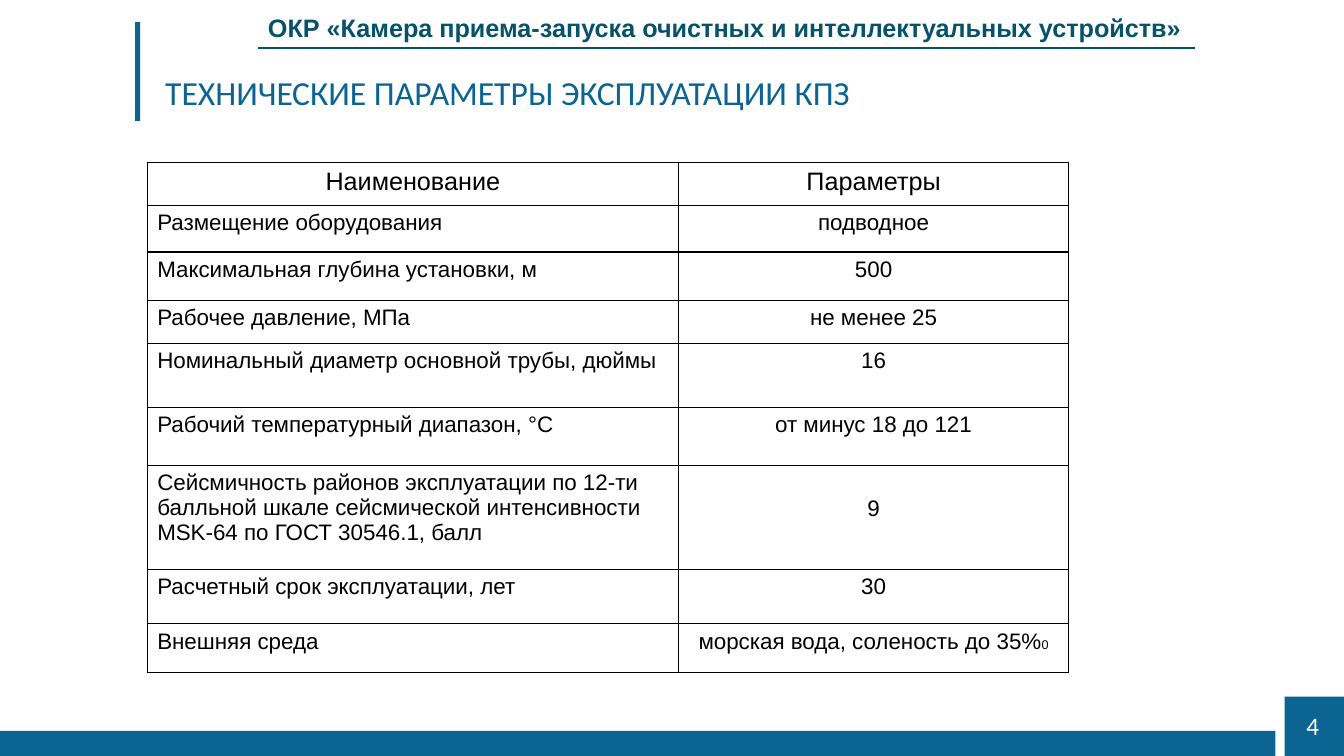
from pptx import Presentation
from pptx.dml.color import RGBColor as RGB
from pptx.enum.shapes import MSO_CONNECTOR as Line, MSO_SHAPE as Shape
from pptx.enum.text import MSO_ANCHOR as Anchor, PP_ALIGN as Align
from pptx.oxml.ns import qn
from pptx.util import Emu, Pt
from lxml.etree import SubElement as Sub

COLORS = {"blue": "0B6491", "teal": "06526A", "ink": "000000", "white": "FFFFFF"}
WIDTHS = [527, 387]
HEIGHTS = [43, 46, 48, 43, 63, 58, 103, 54, 48]
ROWS = [
    ("Наименование", "Параметры"),
    ("Размещение оборудования", "подводное"),
    ("Максимальная глубина установки, м", "500"),
    ("Рабочее давление, МПа", "не менее 25"),
    ("Номинальный диаметр основной трубы, дюймы", "16"),
    ("Рабочий температурный диапазон, °С", "от минус 18 до 121"),
    ("Сейсмичность районов эксплуатации по 12-ти\n"
     "балльной шкале сейсмической интенсивности\n"
     "MSK-64 по ГОСТ 30546.1, балл", "9"),
    ("Расчетный срок эксплуатации, лет", "30"),
    ("Внешняя среда", "морская вода, соленость до 35%"),
]


def px(n):
    return Emu(n * 9144)


class Page:
    def __init__(self, deck):
        self.slide = deck.slides.add_slide(deck.slide_layouts[6])
        self.shapes = self.slide.shapes

    def color(self, name):
        return RGB.from_string(COLORS[name])

    def style(self, run, size, color, face="Arial", bold=False):
        font = run.font
        font.name, font.size, font.bold = face, Pt(size), bold
        font.color.rgb = self.color(color)

    def block(self, *box):
        shape = self.shapes.add_shape(Shape.RECTANGLE, *map(px, box))
        shape.shadow.inherit = False
        shape.fill.solid()
        shape.fill.fore_color.rgb = self.color("blue")
        shape.line.fill.background()

    def rule(self, left, top, right):
        line = self.shapes.add_connector(
            Line.STRAIGHT, px(left), px(top), px(right), px(top))
        line.line.color.rgb = self.color("teal")
        line.line.width = Pt(1.5)
        Sub(line._element.spPr, qn("a:effectLst"))

    def text(self, words, box, size, color, face, bold=False, wrap=True, space=1.0):
        frame = self.shapes.add_textbox(*map(px, box)).text_frame
        frame.word_wrap = wrap
        frame.vertical_anchor = Anchor.MIDDLE
        frame.text = words
        para = frame.paragraphs[0]
        para.line_spacing = space
        self.style(para.runs[0], size, color, face, bold)

    def border(self, cell):
        props = cell._tc.get_or_add_tcPr()
        for side in ("a:lnL", "a:lnR", "a:lnT", "a:lnB"):
            line = Sub(props, qn(side), w=str(Pt(1)))
            fill = Sub(line, qn("a:solidFill"))
            Sub(fill, qn("a:srgbClr"), val=COLORS["ink"])

    def cell(self, cell, words, size, align):
        self.border(cell)
        cell.fill.background()
        cell.text = words
        for para in cell.text_frame.paragraphs:
            para.alignment = align
            self.style(para.runs[0], size, "ink")

    def table(self, left, top):
        box = (left, top, sum(WIDTHS), sum(HEIGHTS))
        grid = self.shapes.add_table(len(ROWS), len(WIDTHS), *map(px, box)).table
        grid.first_row = grid.horz_banding = False
        for col, width in zip(grid.columns, WIDTHS):
            col.width = px(width)
        for i, (row, height) in enumerate(zip(grid.rows, HEIGHTS)):
            row.height = px(height)
            for j, words in enumerate(ROWS[i]):
                head = i == 0
                align = Align.CENTER if head or j else Align.LEFT
                self.cell(grid.cell(i, j), words, 18 if head else 16, align)
        return grid


def main():
    deck = Presentation()
    deck.slide_width, deck.slide_height = px(1333), px(750)
    page = Page(deck)
    page.block(134, 22, 5, 98)
    page.block(1274, 691, 59, 59)
    page.block(0, 725, 1265, 25)
    page.text("ОКР «Камера приема-запуска очистных и интеллектуальных устройств»",
              (256, 7, 946, 40), 18, "teal", "Arial", bold=True)
    page.rule(256, 48, 1185)
    page.text("ТЕХНИЧЕСКИЕ ПАРАМЕТРЫ ЭКСПЛУАТАЦИИ КПЗ",
              (154, 67, 1149, 54), 24, "blue", "Calibri", space=0.9)
    grid = page.table(146, 161)
    grid.cell(6, 1).margin_top = px(30)
    zero = grid.cell(8, 1).text_frame.paragraphs[0].add_run()
    zero.text = "0"
    page.style(zero, 9, "ink")
    page.text("4", (1286, 700, 33, 40), 18, "white", "Calibri", wrap=False)
    deck.save("out.pptx")


if __name__ == "__main__":
    main()
